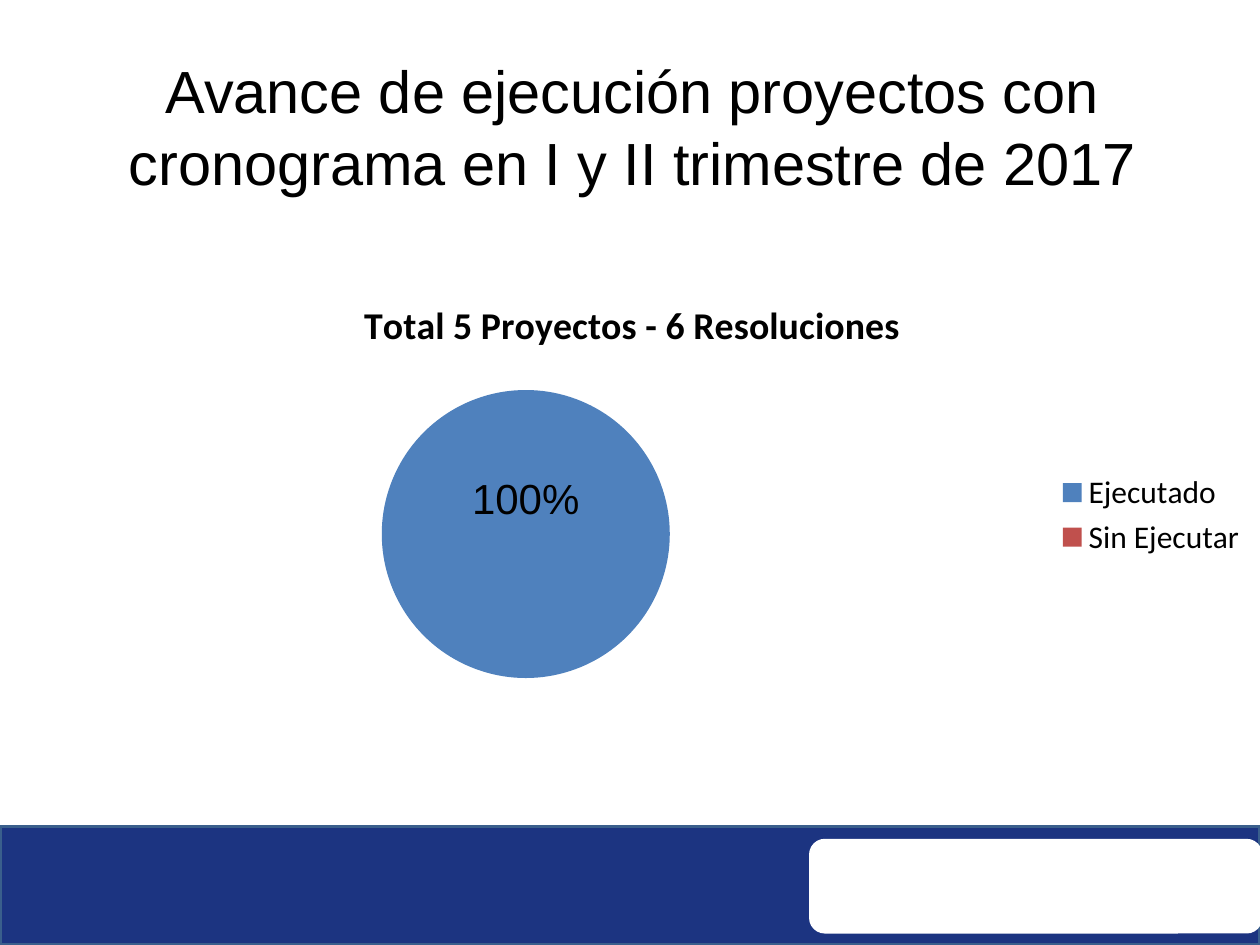
from lxml import etree
from pptx import Presentation
from pptx.chart.data import CategoryChartData
from pptx.dml.color import RGBColor
from pptx.enum.chart import XL_CHART_TYPE as ChartType
from pptx.enum.chart import XL_LABEL_POSITION as LabelPos
from pptx.enum.chart import XL_LEGEND_POSITION as LegendPos
from pptx.enum.shapes import MSO_SHAPE as Shape
from pptx.enum.text import PP_ALIGN as Align
from pptx.oxml import parse_xml
from pptx.oxml.ns import nsdecls, qn
from pptx.util import Cm, Pt

TITLE = "Avance de ejecución proyectos con cronograma en I y II trimestre de 2017"
CHART_TITLE = "Total 5 Proyectos - 6 Resoluciones"
SLICES = {"Ejecutado": (1, "4F81BD"), "Sin Ejecutar": (0, "C0504D")}


def rgb(value):
    return RGBColor.from_string(value)


def set_font(font, color="000000", **values):
    for name, value in values.items():
        setattr(font, name, value)
    font.color.rgb = rgb(color)


def add_block(slide, kind, box, fill, line=None):
    sp = slide.shapes.add_shape(kind, *map(Cm, box))
    sp.shadow.inherit = False
    sp.fill.solid()
    sp.fill.fore_color.rgb = rgb(fill)
    if line:
        sp.line.color.rgb = rgb(line)
        sp.line.width = Pt(2)
    else:
        sp.line.fill.background()


def add_footer(slide, box):
    x, y, w, h = box
    add_block(slide, Shape.RECTANGLE, box, "1C3481", "3A5F8C")
    add_block(slide, Shape.ROUNDED_RECTANGLE, (x + 16.31, y + 0.25, 9.14, h - 0.48), "FFFFFF")


def add_title(slide, box):
    tf = slide.shapes.add_textbox(*map(Cm, box)).text_frame
    tf.word_wrap = True
    p = tf.paragraphs[0]
    p.alignment = Align.CENTER
    r = p.add_run()
    r.text = TITLE
    set_font(r.font, size=Pt(34), name="Arial")
    shadow = parse_xml(
        f'<a:effectLst {nsdecls("a")}><a:outerShdw blurRad="38100" dist="38100" dir="2700000">'
        '<a:srgbClr val="000000"><a:alpha val="43000"/></a:srgbClr>'
        '</a:outerShdw></a:effectLst>')
    r.font._element.find(qn("a:solidFill")).addnext(shadow)


def make_layout(**values):
    """Manual chart layout; values are fractions of the chart."""
    layout = parse_xml(f'<c:layout {nsdecls("c")}><c:manualLayout/></c:layout>')
    for name, value in values.items():
        etree.SubElement(layout[0], qn(f"c:{name}")).set("val", str(value))
    return layout


def add_labels(plot):
    plot.has_data_labels = True
    labels = plot.data_labels
    labels.show_value = True
    labels.number_format = "0%"
    labels.number_format_is_linked = False
    set_font(labels.font, size=Pt(24), name="Arial")

    label = plot.series[0].points[0].data_label
    set_font(label.font, size=Pt(24), name="Arial")
    label.position = LabelPos.CENTER
    d_lbls = plot.series[0]._element.find(qn("c:dLbls"))
    first = d_lbls.find(qn("c:dLbl"))
    first.find(qn("c:idx")).addnext(make_layout(x=0, y=-0.22))
    first.find(qn("c:spPr" if first.find(qn("c:spPr")) is not None else "c:txPr")).addprevious(
        parse_xml(f'<c:numFmt {nsdecls("c")} formatCode="0%" sourceLinked="0"/>'))
    first.addnext(parse_xml(
        f'<c:dLbl {nsdecls("c")}><c:idx val="1"/><c:delete val="1"/></c:dLbl>'))


def add_pie(slide, box):
    data = CategoryChartData(number_format="0%")
    data.categories = list(SLICES)
    data.add_series(CHART_TITLE, [value for value, _ in SLICES.values()])
    chart = slide.shapes.add_chart(ChartType.PIE, *map(Cm, box), data).chart
    set_font(chart.font, size=Pt(18), name="Calibri")

    chart.has_title = True
    tf = chart.chart_title.text_frame
    tf.text = CHART_TITLE
    set_font(tf.paragraphs[0].runs[0].font, size=Pt(21.6), bold=True, name="Calibri")
    chart.has_legend = True
    chart.legend.position = LegendPos.RIGHT
    chart.legend.include_in_layout = False

    plot = chart.plots[0]
    plot.vary_by_categories = True
    for i, (_, color) in enumerate(SLICES.values()):
        fill = plot.series[0].points[i].format.fill
        fill.solid()
        fill.fore_color.rgb = rgb(color)
    add_labels(plot)

    area = plot._element.getparent()
    for old in area.findall(qn("c:layout")):
        area.remove(old)
    area.insert(0, make_layout(layoutTarget="inner", xMode="edge", yMode="edge",
                               x=0.3, y=0.24, w=0.23, h=0.6))


def main():
    prs = Presentation()
    prs.slide_width, prs.slide_height = Cm(25.4), Cm(19.05)
    s = prs.slides.add_slide(prs.slide_layouts[6])
    add_footer(s, (0, 16.66, 25.4, 2.39))
    add_title(s, (0.1, 0.97, 25.3, 3.18))
    add_pie(s, (0.1, 5.54, 25.3, 9.68))
    prs.save("out.pptx")


if __name__ == "__main__":
    main()
